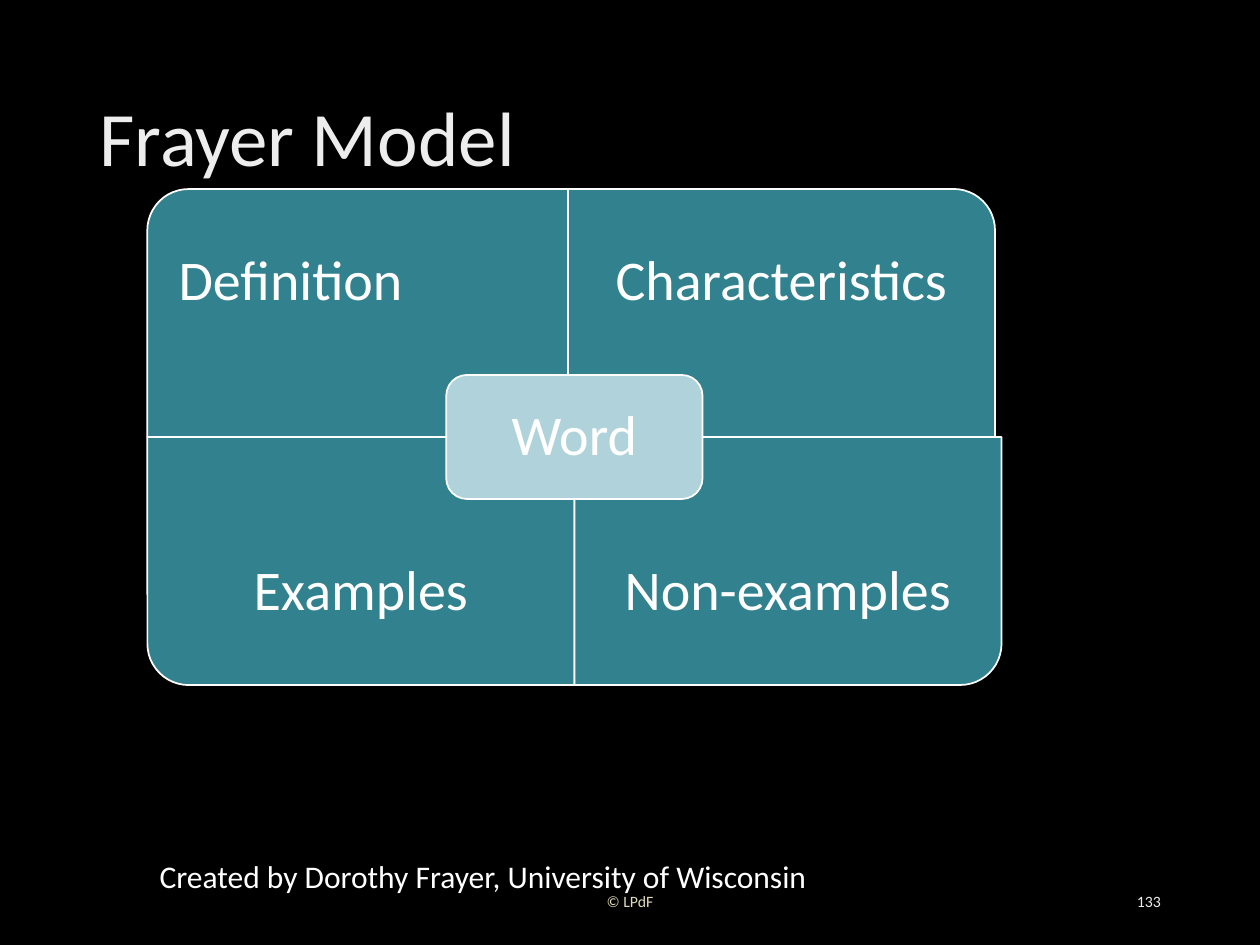
from pptx import Presentation
from pptx.dml.color import RGBColor
from pptx.enum.shapes import MSO_SHAPE
from pptx.enum.text import MSO_ANCHOR, PP_ALIGN
from pptx.util import Cm, Pt

BLACK = RGBColor(0x00, 0x00, 0x00)
WHITE = RGBColor(0xFF, 0xFF, 0xFF)
SILVER = RGBColor(0xED, 0xED, 0xED)
TEAL = RGBColor(0x31, 0x82, 0x8E)
PALE = RGBColor(0xB0, 0xD3, 0xDB)
CREAM = RGBColor(0xDF, 0xDC, 0xB7)
FONT = "Calibri"


def write(frame, text, size, color, align=PP_ALIGN.LEFT, space=1.0,
          anchor=MSO_ANCHOR.MIDDLE):
    frame.word_wrap = True
    frame.vertical_anchor = anchor
    para = frame.paragraphs[0]
    para.alignment = align
    para.line_spacing = space
    run = para.add_run()
    run.text = text
    run.font.name = FONT
    run.font.size = Pt(size)
    run.font.color.rgb = color


def inset(frame, pad):
    frame.margin_left = frame.margin_right = Cm(pad)
    frame.margin_top = frame.margin_bottom = Cm(pad)


def add_label(slide, box, *args, pad=None, **style):
    frame = slide.shapes.add_textbox(*map(Cm, box)).text_frame
    if pad is not None:
        inset(frame, pad)
    write(frame, *args, **style)


def add_panel(slide, kind, box, fill):
    panel = slide.shapes.add_shape(kind, *map(Cm, box))
    panel.shadow.inherit = False
    panel.fill.solid()
    panel.fill.fore_color.rgb = fill
    panel.line.color.rgb = WHITE
    panel.line.width = Pt(1)
    return panel


def add_quad(slide, box, turn, text, align):
    """Draw one quarter, its round corner turned outward, and its label."""
    x, y, w, h = box
    if turn % 180:
        frame = (x + (w - h) / 2, y + (h - w) / 2, h, w)
    else:
        frame = box
    panel = add_panel(slide, MSO_SHAPE.ROUND_1_RECTANGLE, frame, TEAL)
    panel.rotation = turn
    tall = h * 0.75
    top = y if turn in (270, 0) else y + h - tall
    add_label(slide, (x, top, w, tall), text, 32, WHITE,
              align=align, space=0.9, pad=0.63)


def add_model(slide, box):
    """Draw the four quarters and the word in the middle."""
    x, y, w, h = box
    wide, tall = w / 2, h / 2
    shift = 0.13  # the upper right quarter sits slightly to the left
    mid = PP_ALIGN.CENTER
    quads = [
        (0, 0, 270, "Definition", PP_ALIGN.LEFT),
        (wide - shift, 0, 0, "Characteristics", mid),
        (0, tall, 180, "Examples", mid),
        (wide, tall, 90, "Non-examples", mid),
    ]
    for dx, dy, turn, text, align in quads:
        add_quad(slide, (x + dx, y + dy, wide, tall), turn, text, align)

    core_w, core_h = wide * 0.6, tall / 2
    core = (x + wide - core_w / 2, y + tall - core_h / 2, core_w, core_h)
    panel = add_panel(slide, MSO_SHAPE.ROUNDED_RECTANGLE, core, PALE)
    inset(panel.text_frame, 0.33)
    write(panel.text_frame, "Word", 32, WHITE, align=mid, space=0.9)


def add_title(slide, box, text):
    title = slide.shapes.title
    title.left, title.top, title.width, title.height = map(Cm, box)
    write(title.text_frame, text, 44, SILVER, space=0.9)


def add_footer(slide, box):
    x, y, w, h = box
    side = 5.72
    add_label(slide, (x + 6.66, y, 8.58, h), "© LPdF", 9, CREAM,
              align=PP_ALIGN.CENTER)
    add_label(slide, (x + w - side, y, side, h), "133", 9, SILVER,
              align=PP_ALIGN.RIGHT)


def main():
    deck = Presentation()
    deck.slide_width, deck.slide_height = Cm(25.4), Cm(19.05)
    slide = deck.slides.add_slide(deck.slide_layouts[5])
    slide.background.fill.solid()
    slide.background.fill.fore_color.rgb = BLACK

    add_title(slide, (1.75, 1.02, 21.9, 3.68), "Frayer Model")
    add_model(slide, (2.97, 3.81, 17.22, 10))
    add_footer(slide, (1.75, 17.65, 21.9, 1.02))
    add_label(slide, (2.97, 17.15, 16.08, 1.02),
              "Created by Dorothy Frayer, University of Wisconsin", 18, WHITE,
              anchor=MSO_ANCHOR.TOP)
    deck.save("out.pptx")


if __name__ == "__main__":
    main()
